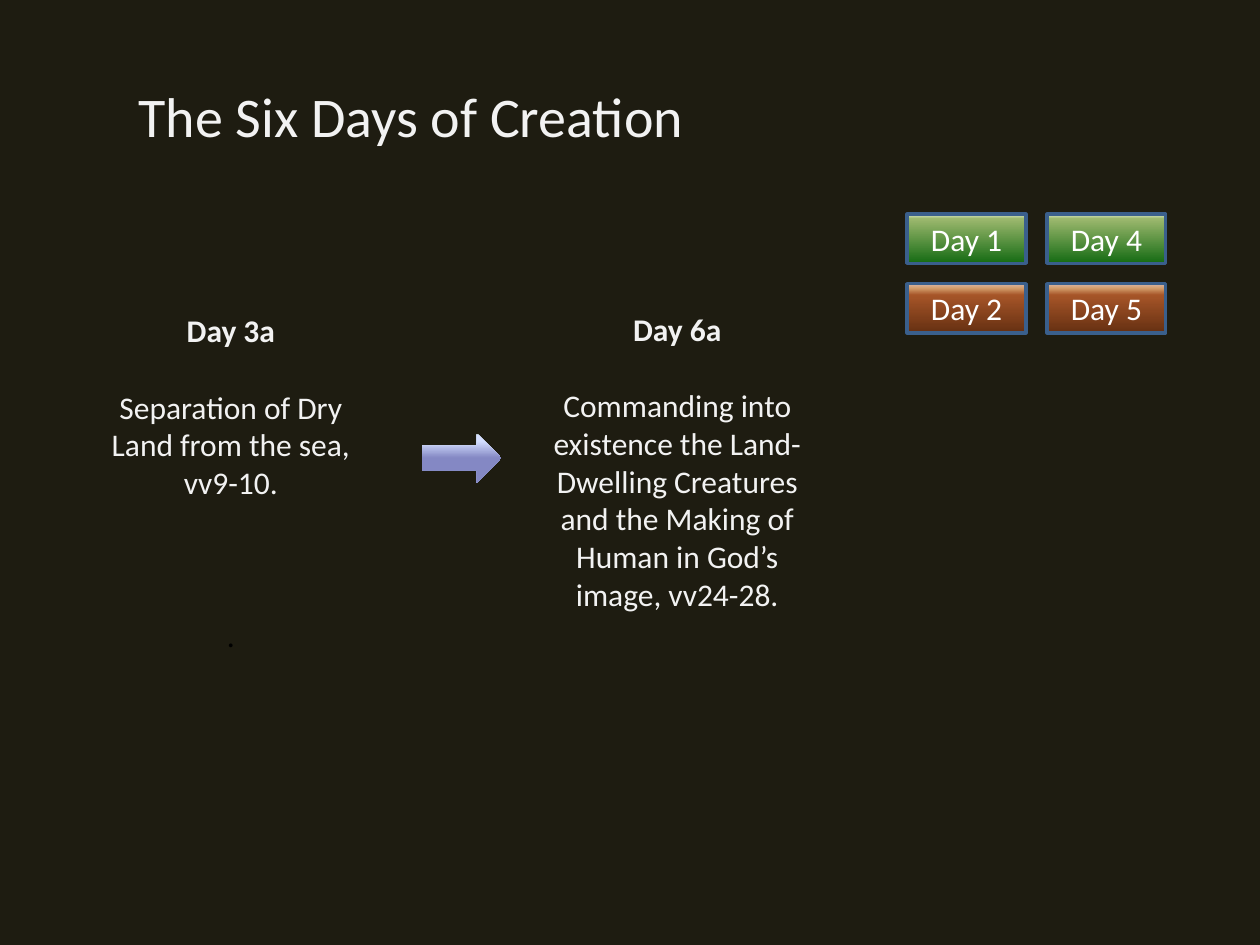
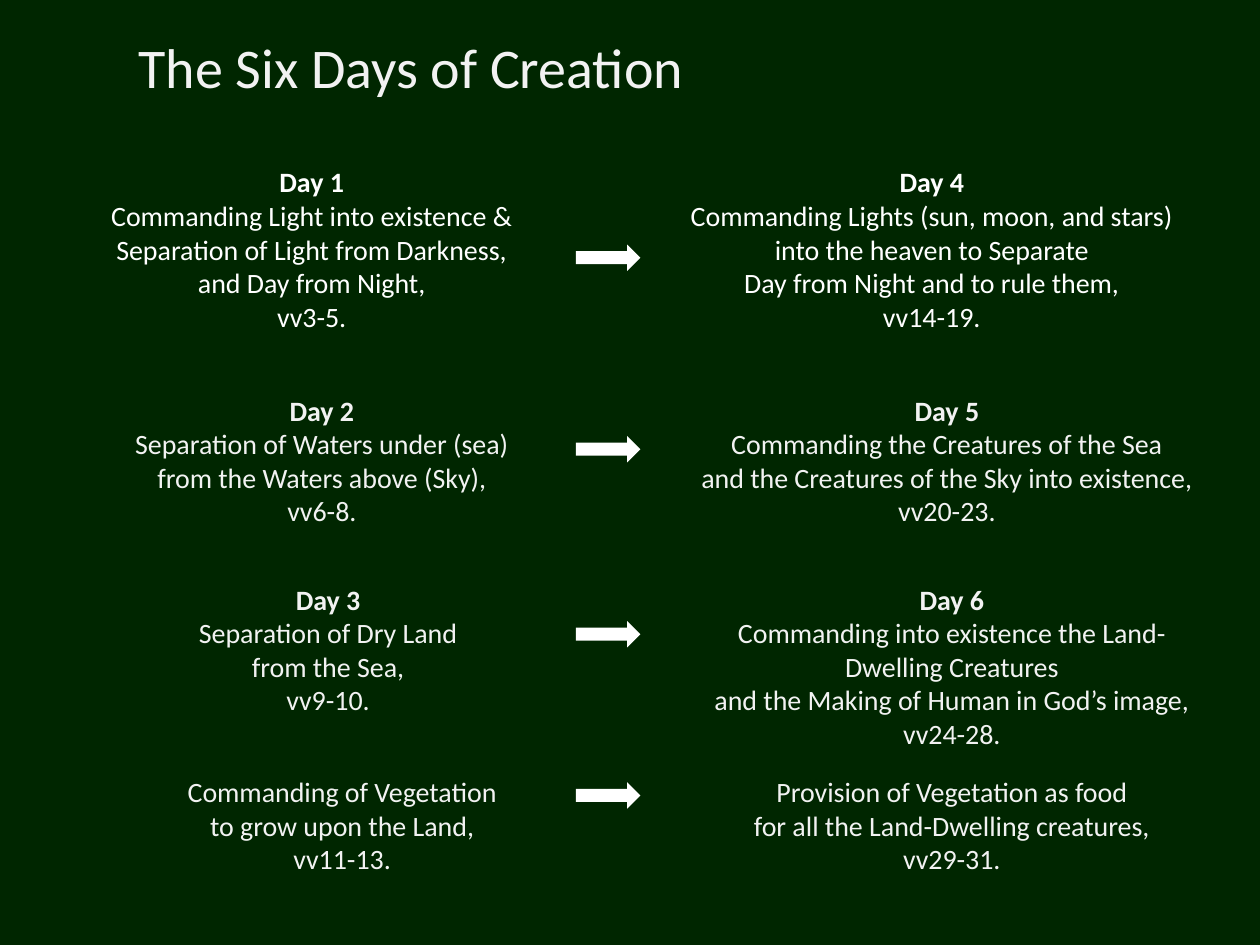
from dataclasses import dataclass

from lxml.etree import SubElement
from pptx import Presentation
from pptx.dml.color import RGBColor
from pptx.enum.shapes import MSO_SHAPE
from pptx.enum.text import MSO_ANCHOR, MSO_AUTO_SIZE, PP_ALIGN
from pptx.oxml.ns import qn
from pptx.util import Cm, Pt

FONT = "Calibri"
WHITE, PALE = "FFFFFF", "F2F2F2"
BUTTON_LINE = "3A5F8C"
TITLE = "The Six Days of Creation"

# Gradient stops run from top to bottom: (percent, colour)
GREEN = [(0, "DDEBCF"), (9, "9CB86E"), (100, "156B13")]
BROWN = [(2, "D6B19C"), (9, "D49E6C"), (23, "A65528"), (100, "663012")]
LILAC = [(0, "96AB94"), (3, "D4DEFF"), (15, "D4DEFF"), (50, "8488C4")]


@dataclass
class Line:
    text: str
    bold: bool = False
    gap: float = 0
    color: str = PALE


@dataclass
class Passage:
    left: float
    width: float
    height: float
    lines: list[Line]


@dataclass
class Row:
    top: float
    arrow_top: float
    cause: Passage
    result: Passage


def rgb(color: str) -> RGBColor:
    return RGBColor.from_string(color)


def verse(heading: str, *texts: str, color: str = PALE) -> list[Line]:
    """A bold heading, if there is one, above plain lines."""
    head = [Line(heading, bold=True, color=color)] if heading else []
    return head + [Line(text, color=color) for text in texts]


def style(paragraph, size: float, color: str, bold: bool = False) -> None:
    paragraph.font.name = FONT
    paragraph.font.size = Pt(size)
    paragraph.font.bold = bold
    paragraph.font.color.rgb = rgb(color)


def add_page(deck, background: str, title_top: float):
    page = deck.slides.add_slide(deck.slide_layouts[5])
    page.background.fill.solid()
    page.background.fill.fore_color.rgb = rgb(background)
    title = page.shapes.title
    title.left, title.top = Cm(0), Cm(title_top)
    title.width, title.height = deck.slide_width, Cm(2)
    frame = title.text_frame
    frame.text = TITLE
    frame.margin_left = Cm(2.79)
    frame.auto_size = MSO_AUTO_SIZE.NONE
    frame.vertical_anchor = MSO_ANCHOR.MIDDLE
    frame.paragraphs[0].alignment = PP_ALIGN.LEFT
    style(frame.paragraphs[0], 32, PALE)
    return page


def add_passage(page, top: float, passage: Passage, size: float) -> None:
    box = page.shapes.add_textbox(
        Cm(passage.left), Cm(top), Cm(passage.width), Cm(passage.height))
    frame = box.text_frame
    frame.word_wrap = True
    frame.auto_size = MSO_AUTO_SIZE.SHAPE_TO_FIT_TEXT
    for index, line in enumerate(passage.lines):
        para = frame.add_paragraph() if index else frame.paragraphs[0]
        para.text = line.text
        para.alignment = PP_ALIGN.CENTER
        para.space_before = Pt(line.gap)
        style(para, size, line.color, line.bold)


def set_gradient(shape, stops: list[tuple[int, str]]) -> None:
    shape.fill.gradient()
    shape.fill.gradient_angle = 270
    stop_list = shape.element.spPr.find(qn("a:gradFill")).find(qn("a:gsLst"))
    for old_stop in list(stop_list):
        stop_list.remove(old_stop)
    for percent, color in stops:
        stop = SubElement(stop_list, qn("a:gs"), pos=str(percent * 1000))
        SubElement(stop, qn("a:srgbClr"), val=color)


def add_arrow(page, left: float, top: float, width: float, height: float):
    arrow = page.shapes.add_shape(
        MSO_SHAPE.RIGHT_ARROW, Cm(left), Cm(top), Cm(width), Cm(height))
    arrow.shadow.inherit = False
    arrow.line.fill.background()
    return arrow


def add_button(page, left: float, top: float, text: str, stops) -> None:
    button = page.shapes.add_shape(
        MSO_SHAPE.RECTANGLE, Cm(left), Cm(top), Cm(2.39), Cm(0.99))
    button.shadow.inherit = False
    set_gradient(button, stops)
    button.line.color.rgb = rgb(BUTTON_LINE)
    button.line.width = Pt(2)
    frame = button.text_frame
    frame.text = text
    frame.vertical_anchor = MSO_ANCHOR.MIDDLE
    frame.paragraphs[0].alignment = PP_ALIGN.CENTER
    style(frame.paragraphs[0], 18, WHITE)


def build_third_pair(deck) -> None:
    page = add_page(deck, "1E1C11", 1.32)

    # Days already covered
    button_rows = [(("Day 1", "Day 4"), GREEN), (("Day 2", "Day 5"), BROWN)]
    for row, (days, stops) in enumerate(button_rows):
        for column, day in enumerate(days):
            add_button(page, 18.29 + 2.82 * column, 4.32 + 1.4 * row, day, stops)

    # Days 3a and 6a
    line_gap = 22
    add_passage(page, 6.15, Passage(1.9, 5.51, 7.19, [
        Line("Day 3a", bold=True),
        Line("Separation of Dry Land from the sea, vv9-10.", gap=line_gap),
        Line(".", gap=3 * line_gap, color="000000"),
    ]), 18)
    add_passage(page, 6.12, Passage(10.9, 5.51, 7.95, [
        Line("Day 6a", bold=True),
        Line("Commanding into existence the Land-Dwelling Creatures and the "
             "Making of Human in God’s image, vv24-28.", gap=line_gap),
    ]), 18)
    set_gradient(add_arrow(page, 8.51, 8.74, 1.6, 0.99), LILAC)


OVERVIEW = [
    Row(3.2, 4.93,
        Passage(0.99, 10.59, 4.52, verse(
            "Day 1",
            "Commanding Light into existence & Separation of Light from Darkness,",
            "and Day from Night,", "vv3-5.", color=WHITE)),
        Passage(13.49, 10.59, 4.52, verse(
            "Day 4",
            "Commanding Lights (sun, moon, and stars) into the heaven to Separate",
            "Day from Night and to rule them,", "vv14-19.", color=WHITE))),
    Row(7.8, 8.79,
        Passage(0.99, 11, 3.07, verse(
            "Day 2", "Separation of Waters under (sea)",
            "from the Waters above (Sky),", "vv6-8.")),
        Passage(13.49, 11.2, 3.07, verse(
            "Day 5", "Commanding the Creatures of the Sea",
            "and the Creatures of the Sky into existence,", "vv20-23."))),
    Row(11.61, 12.52,
        Passage(0.71, 11.81, 3, verse(
            "Day 3", "Separation of Dry Land", "from the Sea,", "vv9-10.")),
        Passage(13.69, 11, 3.76, verse(
            "Day 6", "Commanding into existence the Land-Dwelling Creatures",
            "and the Making of Human in God’s image,", "vv24-28."))),
    Row(15.49, 15.77,
        Passage(1.3, 11.2, 2.31, verse(
            "", "Commanding of Vegetation", "to grow upon the Land,", "vv11-13.")),
        Passage(13.69, 11, 2.39, verse(
            "", "Provision of Vegetation as food",
            "for all the Land-Dwelling creatures,", "vv29-31."))),
]


def build_overview(deck) -> None:
    page = add_page(deck, "002600", 0.33)
    for row in OVERVIEW:
        add_passage(page, row.top, row.cause, 16)
        add_passage(page, row.top, row.result, 16)
        arrow = add_arrow(page, 11.61, row.arrow_top, 1.3, 0.53)
        arrow.fill.solid()
        arrow.fill.fore_color.rgb = rgb(WHITE)


def main() -> None:
    deck = Presentation()
    deck.slide_width, deck.slide_height = Cm(25.4), Cm(19.05)
    build_third_pair(deck)
    build_overview(deck)
    deck.save("out.pptx")


if __name__ == "__main__":
    main()
